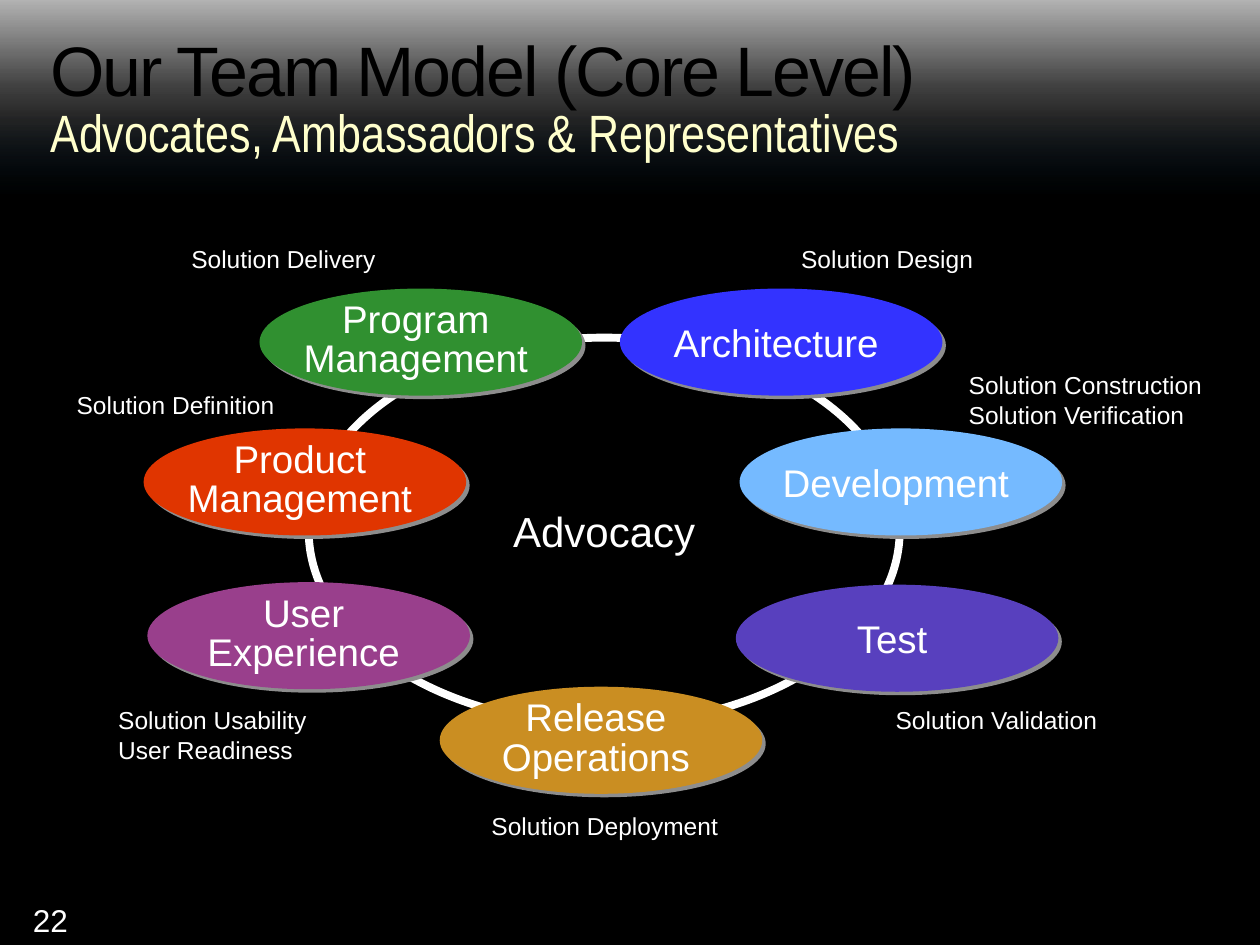
from lxml.etree import SubElement
from pptx import Presentation
from pptx.dml.color import RGBColor
from pptx.enum.shapes import MSO_SHAPE as Shape
from pptx.enum.text import PP_ALIGN as Align
from pptx.oxml import parse_xml
from pptx.oxml.ns import nsdecls, qn
from pptx.util import Inches, Pt

BLACK = RGBColor(0x00, 0x00, 0x00)
WHITE = RGBColor(0xFF, 0xFF, 0xFF)
CREAM = RGBColor(0xFF, 0xFF, 0xCC)
GREEN = RGBColor(0x30, 0x90, 0x30)
BLUE = RGBColor(0x33, 0x33, 0xFF)
SKY = RGBColor(0x75, 0xBA, 0xFF)
VIOLET = RGBColor(0x58, 0x40, 0xBE)
GOLD = RGBColor(0xCA, 0x8E, 0x22)
PLUM = RGBColor(0x99, 0x3F, 0x8C)
RED = RGBColor(0xE0, 0x35, 0x00)
SHADE = RGBColor(0x8D, 0x8D, 0x8D)

ROLE_WIDTH, ROLE_HEIGHT = 2.56, 0.85
ROLES = [
    ("Development", 5.87, 3.40, SKY),
    ("Test", 5.84, 4.64, VIOLET),
    ("Release\vOperations", 3.49, 5.45, GOLD),
    ("User\vExperience", 1.17, 4.62, PLUM),
    ("Product\vManagement", 1.14, 3.40, RED),
    ("Program\vManagement", 2.06, 2.29, GREEN),
    ("Architecture", 4.92, 2.29, BLUE),
]
DUTIES = [
    ("Solution Delivery", 1.42, 1.89, 1.92, Align.LEFT),
    ("Solution Design", 6.26, 1.89, 1.92, Align.LEFT),
    ("Solution Definition", 0.51, 3.05, 2, Align.LEFT),
    ("Solution Validation", 7.01, 5.55, 2, Align.LEFT),
    ("Solution Usability\nUser Readiness", 0.84, 5.55, 2, Align.LEFT),
    ("Solution Construction\nSolution Verification", 7.59, 2.89, 2.33, Align.LEFT),
    ("Solution Deployment", 3.59, 6.39, 2.42, Align.CENTER),
]


def add_text(slide, text, box, size, color=WHITE, align=Align.LEFT,
             font="Arial", spacing=None, wrap=True):
    frame = slide.shapes.add_textbox(*map(Inches, box)).text_frame
    frame.word_wrap = wrap
    frame.text = text
    for paragraph in frame.paragraphs:
        paragraph.alignment = align
        paragraph.line_spacing = spacing
        for run in paragraph.runs:
            run.font.size = Pt(size)
            run.font.name = font
            run.font.color.rgb = color
    return frame


def add_shadow(properties, color, distance):
    effects = parse_xml(
        f'<a:effectLst {nsdecls("a")}><a:outerShdw dist="{Pt(distance)}" '
        f'dir="2700000" algn="ctr" rotWithShape="0"><a:srgbClr val="{color}"/>'
        '</a:outerShdw></a:effectLst>')
    for empty in properties.findall(qn("a:effectLst")):
        properties.remove(empty)
    latin = properties.find(qn("a:latin"))
    if latin is None:
        properties.append(effects)
    else:
        latin.addprevious(effects)


def add_glow_band(slide, box):
    band = slide.shapes.add_shape(Shape.RECTANGLE, *map(Inches, box))
    band.shadow.inherit = False
    band.line.fill.background()
    band.fill.gradient()
    band.fill.gradient_angle = 90
    stops = band._element.spPr.find(qn("a:gradFill")).find(qn("a:gsLst"))
    for stop in list(stops):
        stops.remove(stop)
    for position, color, alpha in [(0, "0070C0", 0), (41, "FFFFFF", 15),
                                   (56, "FFFFFF", 25), (100, "FFFFFF", 70)]:
        stop = SubElement(stops, qn("a:gs"), pos=str(position * 1000))
        tint = SubElement(stop, qn("a:srgbClr"), val=color)
        SubElement(tint, qn("a:alpha"), val=str(alpha * 1000))


def add_heading(slide, left, width):
    subtitle = add_text(slide, "Advocates, Ambassadors & Representatives",
                        (left, 0.85, width, 0.45), 30, CREAM,
                        font="Arial Narrow", spacing=0.9)
    subtitle.margin_top = subtitle.margin_bottom = 0
    title = add_text(slide, "Our Team Model (Core Level)",
                     (left, 0.24, width, 0.67), 40, BLACK, spacing=0.9)
    title.paragraphs[0].runs[0].font._element.set("spc", "-120")
    for frame in (subtitle, title):
        frame.margin_left = 0


def add_ring(slide, box):
    ring = slide.shapes.add_shape(Shape.OVAL, *map(Inches, box))
    ring.shadow.inherit = False
    ring.fill.background()
    ring.line.color.rgb = WHITE
    ring.line.width = Pt(4.5)


def add_role(slide, name, left, top, color):
    oval = slide.shapes.add_shape(Shape.OVAL, Inches(left), Inches(top),
                                  Inches(ROLE_WIDTH), Inches(ROLE_HEIGHT))
    oval.fill.solid()
    oval.fill.fore_color.rgb = color
    oval.line.fill.background()
    add_shadow(oval._element.spPr, SHADE, 2.8)
    two_lines = "\v" in name
    height = 0.73 if two_lines else 0.47
    box = (left - 0.04, top + (ROLE_HEIGHT - height) / 2, ROLE_WIDTH, height)
    frame = add_text(slide, name, box, 22, align=Align.CENTER,
                     spacing=0.85 if two_lines else None, wrap=False)
    for run in frame.paragraphs[0].runs:
        add_shadow(run.font._element, BLACK, 2)


def add_team_model(slide):
    add_text(slide, "Advocacy", (2.49, 3.96, 4.61, 0.5), 24, align=Align.CENTER)
    add_ring(slide, (2.45, 2.68, 4.69, 3.07))
    for role in ROLES:
        add_role(slide, *role)
    for duty, left, top, width, align in DUTIES:
        height = 0.57 if "\n" in duty else 0.33
        add_text(slide, duty, (left, top, width, height), 14, align=align)


def main():
    deck = Presentation()
    deck.slide_width, deck.slide_height = Inches(10), Inches(7.5)
    slide = deck.slides.add_slide(deck.slide_layouts[6])
    slide.background.fill.solid()
    slide.background.fill.fore_color.rgb = BLACK
    add_glow_band(slide, (0, 0, 10, 1.54))
    add_text(slide, "22", (0, 7.1, 0.8, 0.4), 18, align=Align.CENTER)
    add_team_model(slide)
    add_heading(slide, 0.4, 9.18)
    deck.save("out.pptx")


if __name__ == "__main__":
    main()
